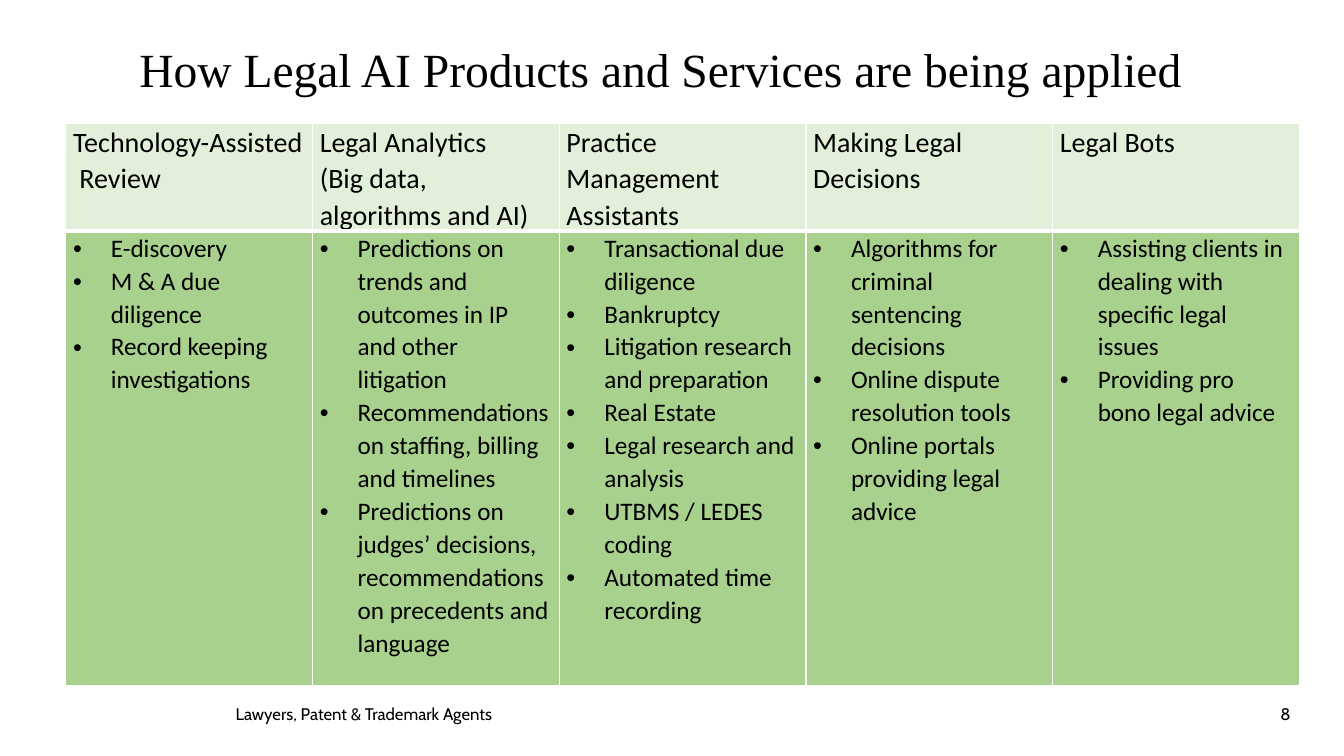
from lxml.etree import SubElement
from pptx import Presentation
from pptx.dml.color import RGBColor
from pptx.enum.text import MSO_ANCHOR, PP_ALIGN
from pptx.oxml.ns import qn
from pptx.util import Pt

BLACK = RGBColor(0x00, 0x00, 0x00)
PALE_GREEN = RGBColor(0xE2, 0xF0, 0xD9)
GREEN = RGBColor(0xA9, 0xD1, 0x8E)
WHITE = RGBColor(0xFF, 0xFF, 0xFF)

APPLICATIONS = [
    (["Technology-Assisted  Review"],
     ["E-discovery", "M & A due diligence", "Record keeping investigations"]),
    (["Legal Analytics", "(Big data, algorithms and AI)"],
     ["Predictions on trends and outcomes in IP and other litigation",
      "Recommendations on staffing, billing and timelines",
      "Predictions on judges’ decisions, recommendations on precedents and language"]),
    (["Practice Management Assistants"],
     ["Transactional due diligence", "Bankruptcy",
      "Litigation research and preparation", "Real Estate",
      "Legal research and analysis", "UTBMS / LEDES coding",
      "Automated time recording"]),
    (["Making Legal Decisions"],
     ["Algorithms for criminal sentencing decisions",
      "Online dispute resolution tools",
      "Online portals providing legal advice"]),
    (["Legal Bots"],
     ["Assisting clients in dealing with specific legal issues",
      "Providing pro bono legal advice"]),
]
COLUMN_WIDTH = 176.25
HEADING_HEIGHT, USES_HEIGHT = 76.5, 325
INDENT = Pt(27)


def style_text(paragraph, font_name, size):
    paragraph.font.name = font_name
    paragraph.font.size = Pt(size)
    paragraph.font.color.rgb = BLACK


def fill_cell(cell, lines, size, color, border_widths, bulleted):
    """Write the lines into a cell; border widths run left, right, top, bottom."""
    cell.margin_left = cell.margin_right = Pt(5.2)
    cell.margin_top = cell.margin_bottom = 0
    properties = cell._tc.get_or_add_tcPr()
    for side, width in zip(("lnL", "lnR", "lnT", "lnB"), border_widths):
        border = SubElement(properties, qn(f"a:{side}"), w=str(Pt(width)))
        border_fill = SubElement(border, qn("a:solidFill"))
        SubElement(border_fill, qn("a:srgbClr"), val=str(WHITE))
    cell.fill.solid()
    cell.fill.fore_color.rgb = color

    cell.text = "\n".join(lines)
    for paragraph in cell.text_frame.paragraphs:
        if bulleted:
            layout = paragraph._p.get_or_add_pPr()
            layout.set("marL", str(INDENT))
            layout.set("indent", str(-INDENT))
            SubElement(layout, qn("a:buFont"), typeface="Arial")
            SubElement(layout, qn("a:buChar"), char="•")
        paragraph.line_spacing = 1.07
        style_text(paragraph, "Calibri", size)


presentation = Presentation()
presentation.slide_width, presentation.slide_height = Pt(960), Pt(540)
slide = presentation.slides.add_slide(presentation.slide_layouts[6])

# Title, footer and page number
for text, left, top, width, height, font_name, size, alignment, spacing in [
    ("How Legal AI Products and Services are being applied",
     39, 26.5, 866, 50.5, "Times New Roman", 34, PP_ALIGN.CENTER, 0.9),
    ("Lawyers, Patent & Trademark Agents",
     161.3, 499, 242, 21.6, "Cabin", 12, PP_ALIGN.LEFT, 1.0),
    ("8", 687, 499, 242, 21.6, "Cabin", 12, PP_ALIGN.RIGHT, 1.0),
]:
    frame = slide.shapes.add_textbox(Pt(left), Pt(top), Pt(width), Pt(height)).text_frame
    frame.word_wrap = True
    frame.vertical_anchor = MSO_ANCHOR.MIDDLE
    line = frame.paragraphs[0]
    line.text = text
    line.alignment = alignment
    line.line_spacing = spacing
    style_text(line, font_name, size)

# Applications table
table = slide.shapes.add_table(
    2, len(APPLICATIONS), Pt(47), Pt(88), Pt(COLUMN_WIDTH * len(APPLICATIONS)),
    Pt(HEADING_HEIGHT + USES_HEIGHT)).table
table.first_row = False
table.horz_banding = False
table.rows[0].height = Pt(HEADING_HEIGHT)
table.rows[1].height = Pt(USES_HEIGHT)
for column, (heading, uses) in enumerate(APPLICATIONS):
    table.columns[column].width = Pt(COLUMN_WIDTH)
    fill_cell(table.cell(0, column), heading, 20, PALE_GREEN, (1, 1, 1, 3), False)
    fill_cell(table.cell(1, column), uses, 18, GREEN, (1, 1, 3, 1), True)

presentation.save("out.pptx")
